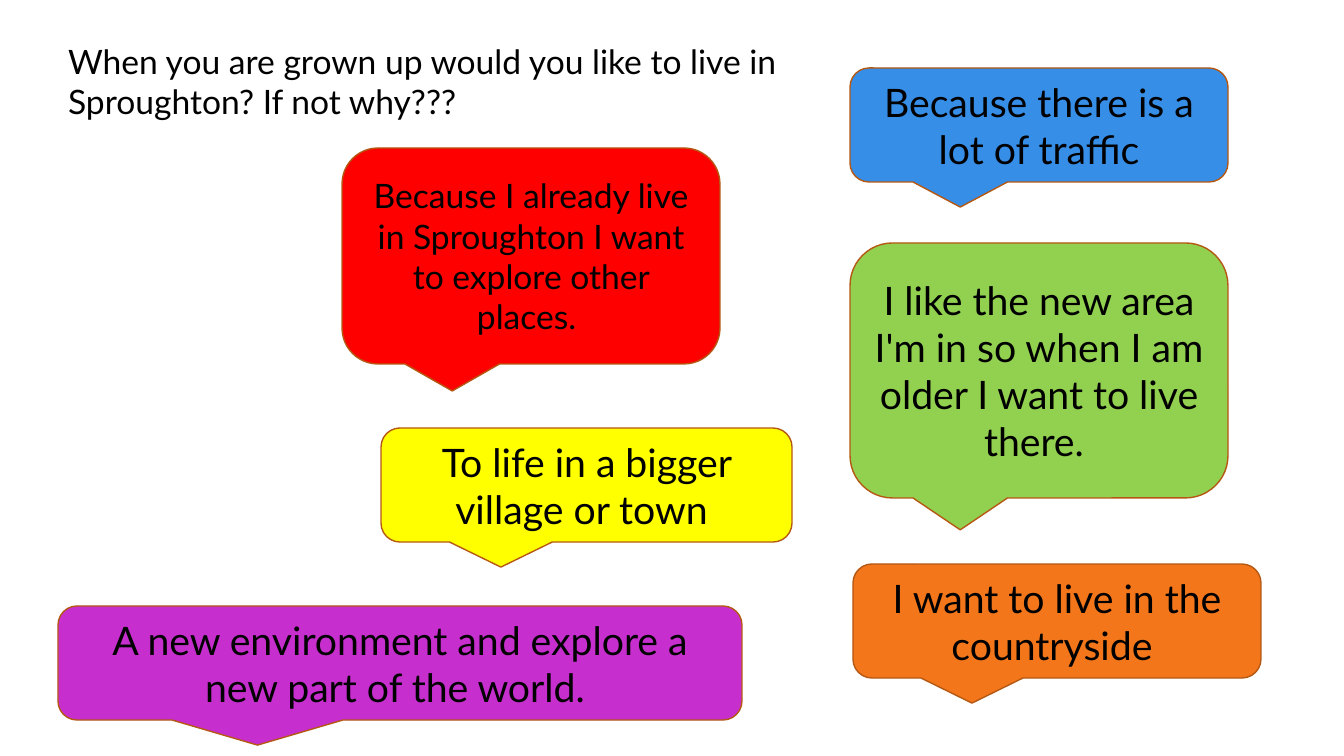
from dataclasses import dataclass

from pptx import Presentation
from pptx import util as u
from pptx.dml.color import RGBColor
from pptx.enum import shapes, text

SCALE = 914400 / 100.8


@dataclass(frozen=True)
class Theme:
    font: str = "Lato"
    ink: str = "000000"
    edge: str = "B45813"
    blue: str = "368EE7"
    red: str = "FF0000"
    green: str = "92D050"
    yellow: str = "FFFF00"
    orange: str = "F3771A"
    purple: str = "C62ECD"
    small: int = 24
    large: int = 28


THEME = Theme()
SHORT, TALL = 0.72, 0.625

REPLIES = [
    ((850, 68, 378, 114), THEME.blue, THEME.large, SHORT,
     "Because there is a lot of traffic"),
    ((342, 148, 378, 216), THEME.red, THEME.small, TALL,
     "Because I already live in Sproughton I want to explore other places. "),
    ((850, 243, 378, 255), THEME.green, THEME.large, TALL,
     "I like the new area I'm in so when I am older I want to live there. "),
    ((381, 428, 411, 114), THEME.yellow, THEME.large, SHORT,
     "To life in a bigger village or town "),
    ((853, 564, 408, 114), THEME.orange, THEME.large, SHORT,
     "I want to live in the countryside "),
    ((58, 606, 684, 114), THEME.purple, THEME.large, SHORT,
     "A new environment and explore a new part of the world. "),
]


def px(n):
    return u.Emu(round(n * SCALE))


def write(frame, words, size, align, anchor):
    frame.word_wrap = True
    frame.auto_size = text.MSO_AUTO_SIZE.NONE
    frame.vertical_anchor = anchor
    para = frame.paragraphs[0]
    para.alignment = align
    run = para.add_run()
    run.text = words
    run.font.name = THEME.font
    run.font.size = u.Pt(size)
    run.font.color.rgb = RGBColor.from_string(THEME.ink)


def ask(slide, box, words):
    title = slide.shapes.title
    title.left, title.top, title.width, title.height = map(px, box)
    write(title.text_frame, words, THEME.small,
          text.PP_ALIGN.LEFT, text.MSO_ANCHOR.TOP)


def reply(slide, box, fill, size, tip, words):
    kind = shapes.MSO_SHAPE.ROUNDED_RECTANGULAR_CALLOUT
    bubble = slide.shapes.add_shape(kind, *map(px, box))
    bubble.shadow.inherit = False
    for i, value in enumerate((-0.20833, tip, 0.16667)):
        bubble.adjustments[i] = value
    bubble.fill.solid()
    bubble.fill.fore_color.rgb = RGBColor.from_string(fill)
    bubble.line.color.rgb = RGBColor.from_string(THEME.edge)
    bubble.line.width = u.Pt(1)
    write(bubble.text_frame, words, size,
          text.PP_ALIGN.CENTER, text.MSO_ANCHOR.MIDDLE)


def main():
    deck = Presentation()
    deck.slide_width, deck.slide_height = px(1344), px(756)
    slide = deck.slides.add_slide(deck.slide_layouts.get_by_name("Title Only"))
    ask(slide, (58, 36, 756, 101),
        "When you are grown up would you like to live in Sproughton? If not why???")
    for item in REPLIES:
        reply(slide, *item)
    deck.save("out.pptx")


if __name__ == "__main__":
    main()
